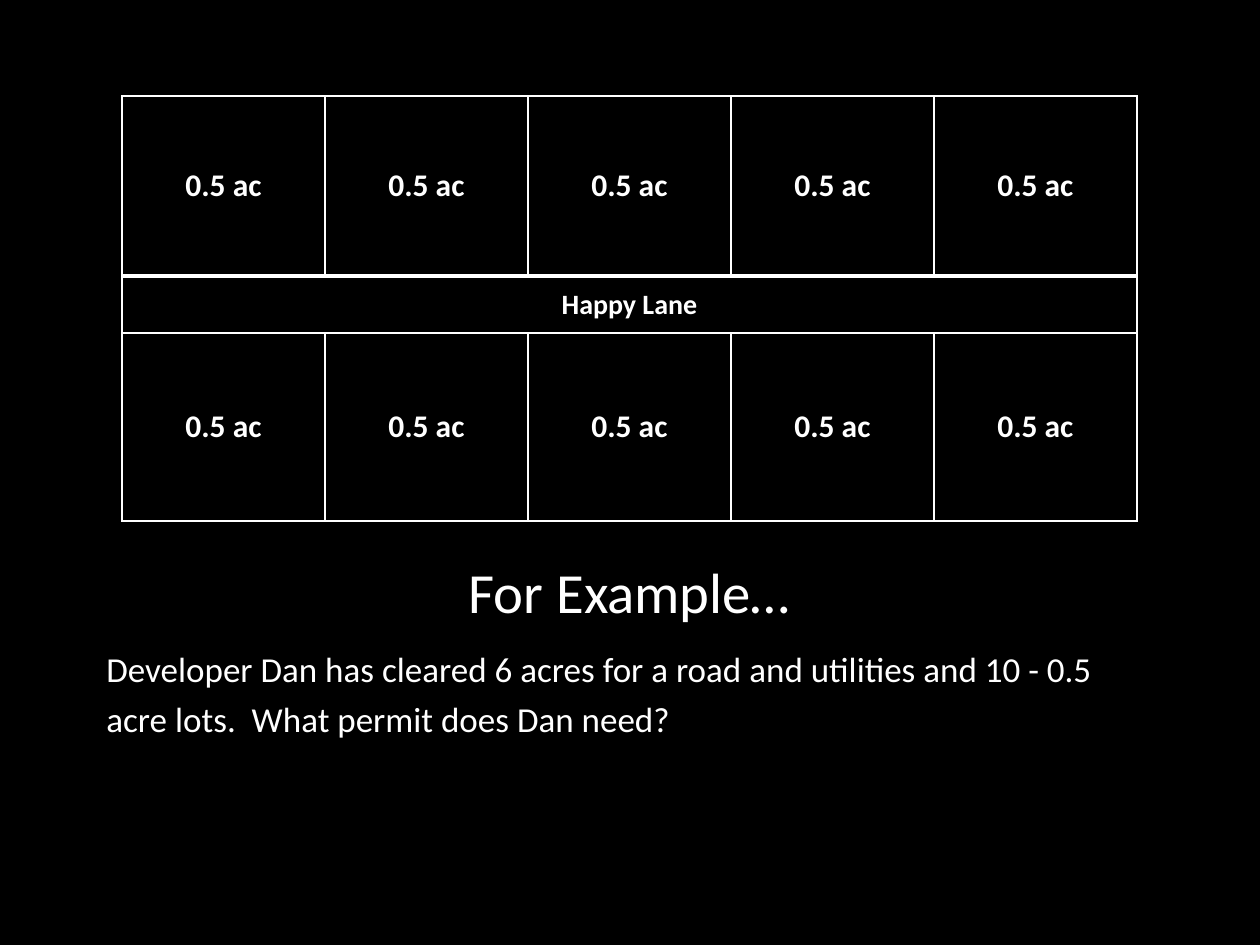
from lxml.etree import SubElement
from pptx import Presentation
from pptx.dml.color import RGBColor
from pptx.enum.text import MSO_ANCHOR, PP_ALIGN
from pptx.oxml.ns import qn
from pptx.util import Emu, Pt

EMU_PER_INCH = 914400
PX_PER_INCH = 126
WHITE = "FFFFFF"
BLACK = "000000"
LOT_COUNT = 5
LOT_WIDTH = 203
ROW_HEIGHTS = [180, 57, 188]
LANE_ROW = 1


def px(length):
    return Emu(round(length * EMU_PER_INCH / PX_PER_INCH))


def color(hex_value):
    return RGBColor.from_string(hex_value)


def write_text(frame, text, size=18, bold=False, align=PP_ALIGN.LEFT, line_spacing=1.0):
    paragraph = frame.paragraphs[0]
    paragraph.alignment = align
    paragraph.line_spacing = line_spacing
    run = paragraph.add_run()
    run.text = text
    run.font.name = "Calibri"
    run.font.size = Pt(size)
    run.font.bold = bold
    run.font.color.rgb = color(WHITE)


def add_text_box(slide, left, top, width, height, text, anchor=MSO_ANCHOR.TOP, **text_format):
    box = slide.shapes.add_textbox(px(left), px(top), px(width), px(height))
    frame = box.text_frame
    frame.word_wrap = True
    frame.vertical_anchor = anchor
    write_text(frame, text, **text_format)


def set_borders(cell, top=1, bottom=1):
    properties = cell._tc.get_or_add_tcPr()
    widths = {"a:lnL": 1, "a:lnR": 1, "a:lnT": top, "a:lnB": bottom}
    for tag, width in widths.items():
        line = SubElement(properties, qn(tag), w=str(Pt(width)))
        fill = SubElement(line, qn("a:solidFill"))
        SubElement(fill, qn("a:srgbClr"), val=WHITE)


def format_cell(cell, top, bottom):
    set_borders(cell, top, bottom)
    cell.fill.background()
    cell.vertical_anchor = MSO_ANCHOR.MIDDLE
    cell.margin_left = cell.margin_right = px(16)
    cell.margin_top = cell.margin_bottom = px(0)


def add_lot_table(slide, left, top):
    frame = slide.shapes.add_table(
        len(ROW_HEIGHTS), LOT_COUNT, px(left), px(top),
        px(LOT_WIDTH * LOT_COUNT), px(sum(ROW_HEIGHTS)))
    table = frame.table
    table.first_row = False
    table.horz_banding = False
    for column in table.columns:
        column.width = px(LOT_WIDTH)
    for row_index, height in enumerate(ROW_HEIGHTS):
        row = table.rows[row_index]
        row.height = px(height)
        for cell in row.cells:
            format_cell(cell, top=3 if row_index == LANE_ROW else 1,
                        bottom=3 if row_index == LANE_ROW - 1 else 1)
            if row_index != LANE_ROW:
                write_text(cell.text_frame, "0.5 ac", bold=True, align=PP_ALIGN.CENTER)
    lane = table.cell(LANE_ROW, 0)
    lane.merge(table.cell(LANE_ROW, LOT_COUNT - 1))
    write_text(lane.text_frame, "Happy Lane", size=16, bold=True, align=PP_ALIGN.CENTER)


def main():
    presentation = Presentation()
    presentation.slide_width = px(1260)
    presentation.slide_height = px(945)
    slide = presentation.slides.add_slide(presentation.slide_layouts[6])
    slide.background.fill.solid()
    slide.background.fill.fore_color.rgb = color(BLACK)

    add_text_box(slide, 94, 553, 1071, 79, "For Example…", anchor=MSO_ANCHOR.BOTTOM,
                 size=32.4, align=PP_ALIGN.CENTER, line_spacing=0.9)
    add_lot_table(slide, 122, 96)
    add_text_box(slide, 94, 633, 1071, 165,
                 "Developer Dan has cleared 6 acres for a road and utilities and "
                 "10 - 0.5 acre lots.  What permit does Dan need?",
                 size=20, line_spacing=1.2)
    presentation.save("out.pptx")


if __name__ == "__main__":
    main()
